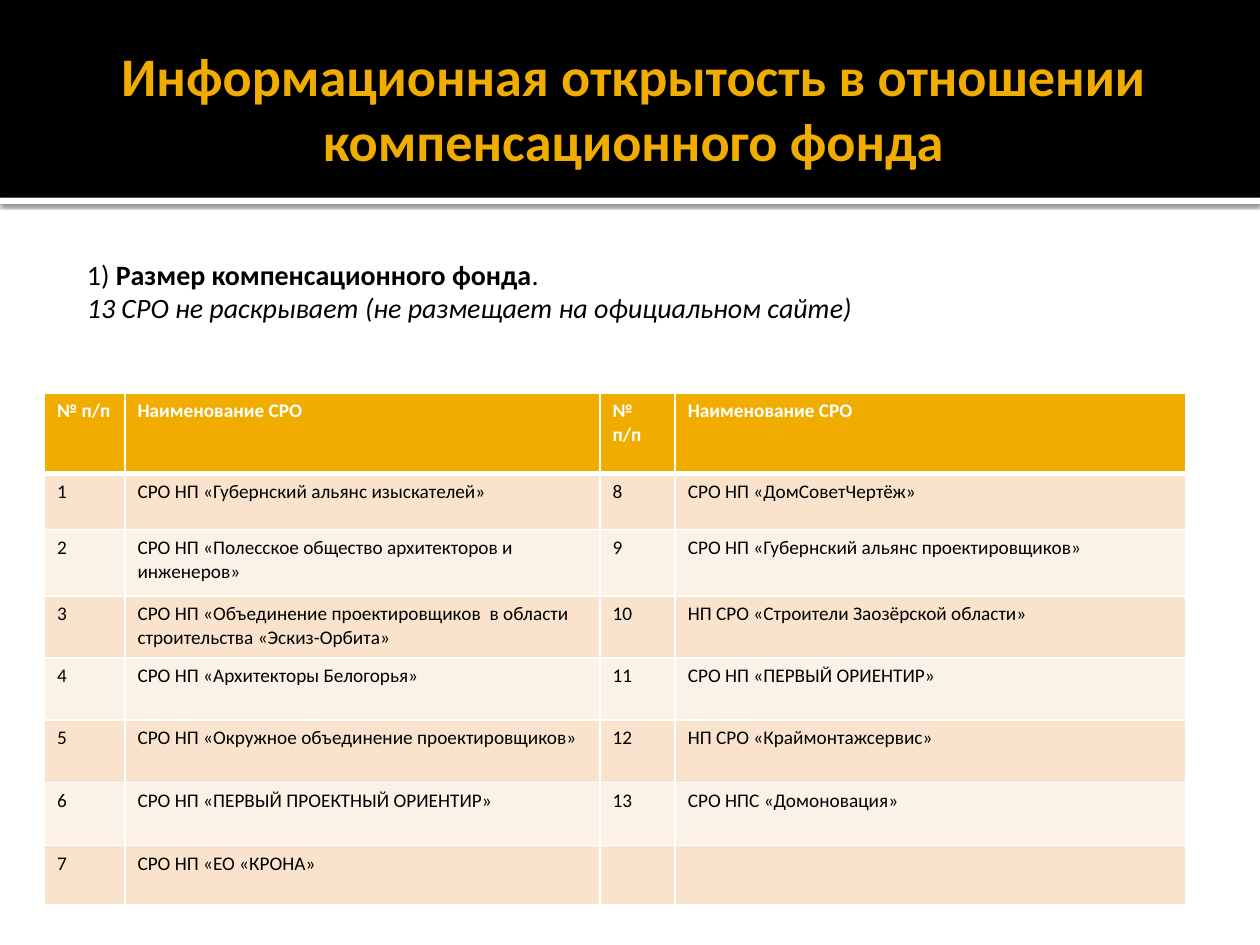
import lxml.etree
import pptx
import pptx.dml.color
import pptx.enum.shapes
import pptx.enum.text
import pptx.oxml
import pptx.oxml.ns
import pptx.util

Pt = pptx.util.Pt
ALIGN = pptx.enum.text.PP_ALIGN
ANCHOR = pptx.enum.text.MSO_ANCHOR
BLACK, WHITE, AMBER = "000000", "FFFFFF", "F0AD00"
BANDS = ("F9E3CC", "FCF1E7")


def color(value):
    return pptx.dml.color.RGBColor.from_string(value)


class SlideBuilder:
    font_name = "Calibri"

    def __init__(self, deck):
        self.page = deck.slides.add_slide(deck.slide_layouts[6])

    def band(self, left, top, width, height, fill):
        shape = self.page.shapes.add_shape(
            pptx.enum.shapes.MSO_SHAPE.RECTANGLE, Pt(left), Pt(top), Pt(width), Pt(height))
        shape.shadow.inherit = False
        shape.fill.solid()
        shape.fill.fore_color.rgb = color(fill)
        shape.line.fill.background()
        return shape

    def drop_shadow(self, shape, blur, distance, opacity):
        effects = shape._element.spPr.find(pptx.oxml.ns.qn("a:effectLst"))
        effects.append(pptx.oxml.parse_xml(
            f'<a:outerShdw {pptx.oxml.ns.nsdecls("a")} blurRad="{Pt(blur)}" '
            f'dist="{Pt(distance)}" dir="5400000" algn="tl" rotWithShape="0">'
            f'<a:srgbClr val="{BLACK}"><a:alpha val="{opacity * 1000}"/></a:srgbClr>'
            '</a:outerShdw>'))

    def span(self, para, text, size, ink, bold=False, italic=False):
        span = para.add_run()
        span.text = text
        span.font.name = self.font_name
        span.font.size = Pt(size)
        span.font.bold = bold
        span.font.italic = italic
        span.font.color.rgb = color(ink)

    def text(self, left, top, width, height, paragraphs, size, ink, align, anchor, insets):
        box = self.page.shapes.add_textbox(Pt(left), Pt(top), Pt(width), Pt(height))
        frame = box.text_frame
        frame.word_wrap = True
        frame.vertical_anchor = anchor
        frame.margin_left, frame.margin_top, frame.margin_right, frame.margin_bottom = map(Pt, insets)
        for index, spans in enumerate(paragraphs):
            para = frame.add_paragraph() if index else frame.paragraphs[0]
            para.alignment = align
            for words, style in spans:
                self.span(para, words, size, ink, **style)

    def border(self, cell, side, width):
        line = lxml.etree.SubElement(
            cell._tc.get_or_add_tcPr(), pptx.oxml.ns.qn(f"a:ln{side}"), w=str(Pt(width)))
        fill = lxml.etree.SubElement(line, pptx.oxml.ns.qn("a:solidFill"))
        lxml.etree.SubElement(fill, pptx.oxml.ns.qn("a:srgbClr"), val=WHITE)

    def table(self, left, top, widths, heights, rows, size):
        table = self.page.shapes.add_table(
            len(rows), len(widths), Pt(left), Pt(top), Pt(sum(widths)), Pt(sum(heights))).table
        table.horz_banding = False
        for column, width in zip(table.columns, widths):
            column.width = Pt(width)
        for index, (row, height) in enumerate(zip(rows, heights)):
            table.rows[index].height = Pt(height)
            header = index == 0
            for position, words in enumerate(row):
                cell = table.cell(index, position)
                for side in "LRTB":
                    thick = (header and side == "B") or (index == 1 and side == "T")
                    self.border(cell, side, 3 if thick else 1)
                cell.fill.solid()
                cell.fill.fore_color.rgb = color(AMBER if header else BANDS[(index - 1) % 2])
                if words:
                    self.span(cell.text_frame.paragraphs[0], words, size,
                              WHITE if header else BLACK, bold=header)


def main():
    deck = pptx.Presentation()
    deck.slide_width, deck.slide_height = Pt(720), Pt(540)
    builder = SlideBuilder(deck)

    stripe = builder.band(0, 113, 720, 3.6, WHITE)
    builder.drop_shadow(stripe, 2.5, 0.8, 60)
    builder.band(0, 0, 720, 113, BLACK)

    builder.text(36, 12.2, 648, 98.5,
                 [[("Информационная открытость в отношении компенсационного фонда", {"bold": True})]],
                 31, AMBER, ALIGN.CENTER, ANCHOR.MIDDLE, (7.2, 3.6, 3.6, 3.6))
    builder.text(36, 139.7, 648, 364, [
        [("1) ", {}), ("Размер компенсационного фонда", {"bold": True}), (". ", {})],
        [("13 СРО не раскрывает (не размещает на официальном сайте)", {"italic": True})],
    ], 16, BLACK, ALIGN.JUSTIFY, ANCHOR.TOP, (13.7, 7.2, 7.2, 3.6))

    organizations = [
        "СРО НП «Губернский альянс изыскателей»",
        "СРО НП «Полесское общество архитекторов и инженеров»",
        "СРО НП «Объединение проектировщиков  в области строительства «Эскиз-Орбита»",
        "СРО НП «Архитекторы Белогорья»",
        "СРО НП «Окружное объединение проектировщиков»",
        "СРО НП «ПЕРВЫЙ ПРОЕКТНЫЙ ОРИЕНТИР»",
        "СРО НП «ЕО «КРОНА»",
        "СРО НП «ДомСоветЧертёж»",
        "СРО НП «Губернский альянс проектировщиков»",
        "НП СРО «Строители Заозёрской области»",
        "СРО НП «ПЕРВЫЙ ОРИЕНТИР»",
        "НП СРО «Краймонтажсервис»",
        "СРО НПС «Домоновация»",
    ]
    entries = [(str(number), name) for number, name in enumerate(organizations, 1)]
    entries.append(("", ""))
    half = len(entries) // 2
    rows = [("№ п/п", "Наименование СРО") * 2]
    rows += [first + second for first, second in zip(entries[:half], entries[half:])]
    builder.table(25.4, 224.6, [46, 271.5, 43, 291.5],
                  [45.9, 32.2, 38, 35.3, 35.6, 35.6, 36, 33.7], rows, 11)

    deck.save("out.pptx")


if __name__ == "__main__":
    main()
